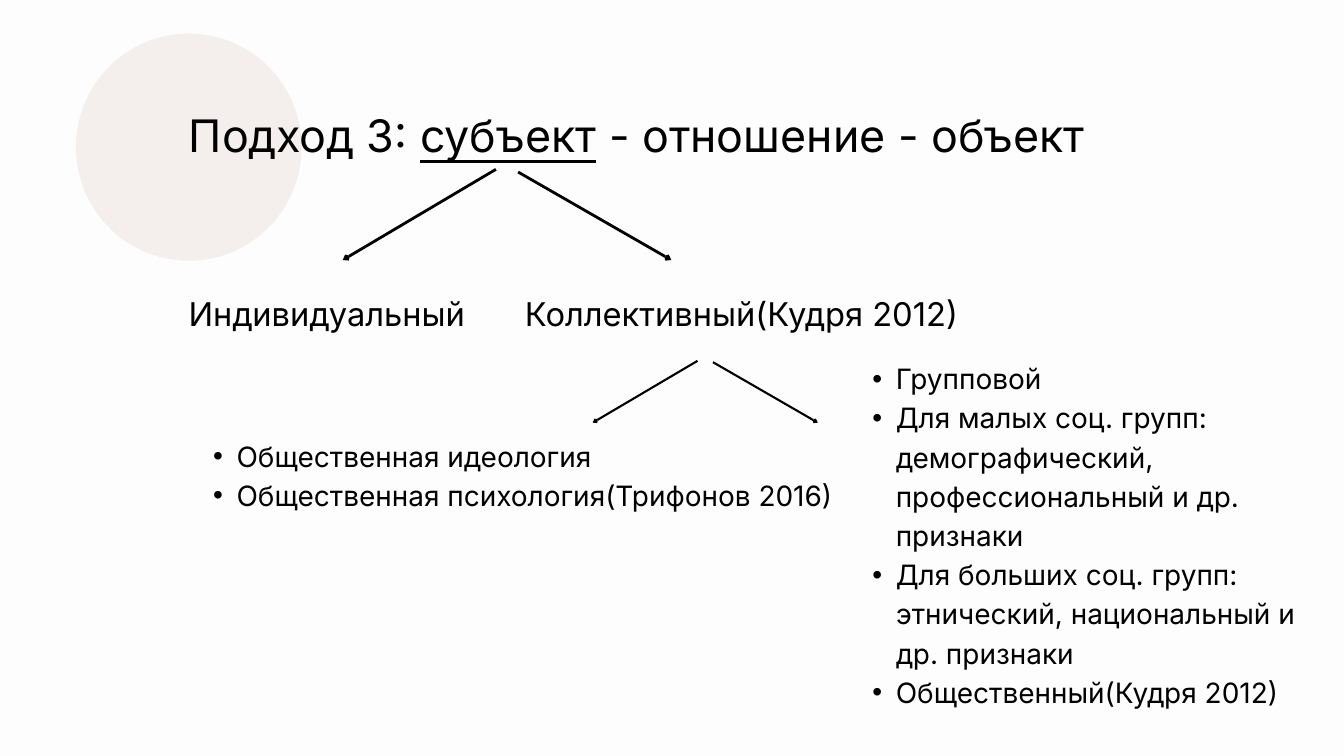
from pptx import Presentation
from pptx.dml.color import RGBColor
from pptx.enum.shapes import MSO_CONNECTOR as Conn, MSO_SHAPE as Shape
from pptx.enum.text import PP_ALIGN as Align
from pptx.oxml.ns import qn
from pptx.util import Inches, Pt
from lxml.etree import SubElement as Sub

BLACK = RGBColor(0x00, 0x00, 0x00)
PAPER = RGBColor(0xFD, 0xFD, 0xFD)
BLUSH = RGBColor(0xF4, 0xEF, 0xED)


def add_text(box, size, paras, align=Align.LEFT, bullet=False):
    """Each paragraph is a list of (text, underlined) runs."""
    frame = slide.shapes.add_textbox(*map(Inches, box)).text_frame
    frame.word_wrap = True
    frame.margin_left = frame.margin_right = 0
    frame.margin_top = frame.margin_bottom = 0
    for i, runs in enumerate(paras):
        para = frame.add_paragraph() if i else frame.paragraphs[0]
        para.alignment = align
        para.line_spacing = Pt(size * 1.4)
        if bullet:
            para.level = 1
            props = para._p.get_or_add_pPr()
            props.set("marL", str(Inches(0.71)))
            props.set("indent", str(Inches(-0.35)))
            Sub(props, qn("a:buFont"), typeface="Arial")
            Sub(props, qn("a:buChar"), char="•")
        for words, under in runs:
            run = para.add_run()
            run.text = words
            font = run.font
            font.name, font.size = "Inter", Pt(size)
            font.color.rgb = BLACK
            font.underline = under


def add_arrow(start, end, width):
    line = slide.shapes.add_connector(Conn.STRAIGHT, *map(Inches, start + end))
    line.line.color.rgb = BLACK
    line.line.width = Pt(width)
    Sub(line.line._get_or_add_ln(), qn("a:tailEnd"), type="arrow", w="sm", len="sm")
    Sub(line._element.spPr, qn("a:effectLst"))


deck = Presentation()
deck.slide_width, deck.slide_height = Inches(20), Inches(11.25)
slide = deck.slides.add_slide(deck.slide_layouts[6])
slide.background.fill.solid()
slide.background.fill.fore_color.rgb = PAPER

disc = slide.shapes.add_shape(
    Shape.OVAL, Inches(1.13), Inches(0.5), Inches(3.36), Inches(3.38))
disc.fill.solid()
disc.fill.fore_color.rgb = BLUSH
disc.line.fill.background()
disc.shadow.inherit = False

# Title
add_text((2.81, 1.47, 16.06, 0.9), 48, [[
    ("Подход 3: ", False), ("субъект", True), (" - отношение - объект", False)]])

# Branches from the subject, then from the collective subject
for start, end, width in [
    ((7.71, 2.56), (9.99, 3.87), 3),
    ((7.38, 2.52), (5.1, 3.87), 3),
    ((10.61, 5.39), (12.17, 6.29), 2.25),
    ((10.38, 5.37), (8.82, 6.29), 2.25),
]:
    add_arrow(start, end, width)

# Kinds of subject
for left, width, words in [
    (2.79, 4.15, "Индивидуальный"),
    (7.77, 6.67, "Коллективный(Кудря 2012) "),
]:
    add_text((left, 4.27, width, 0.66), 35, [[(words, False)]], Align.CENTER)

# Bullet lists
for box, items in [
    ((2.81, 6.45, 9.65, 1.16), [
        "Общественная идеология",
        "Общественная психология(Трифонов 2016)",
    ]),
    ((12.62, 5.3, 7.38, 5.24), [
        "Групповой",
        "Для малых соц. групп: демографический, профессиональный и др. признаки",
        "Для больших соц. групп: этнический, национальный и др. признаки",
        "Общественный(Кудря 2012)",
    ]),
]:
    add_text(box, 30, [[(item, False)] for item in items], bullet=True)

deck.save("out.pptx")
